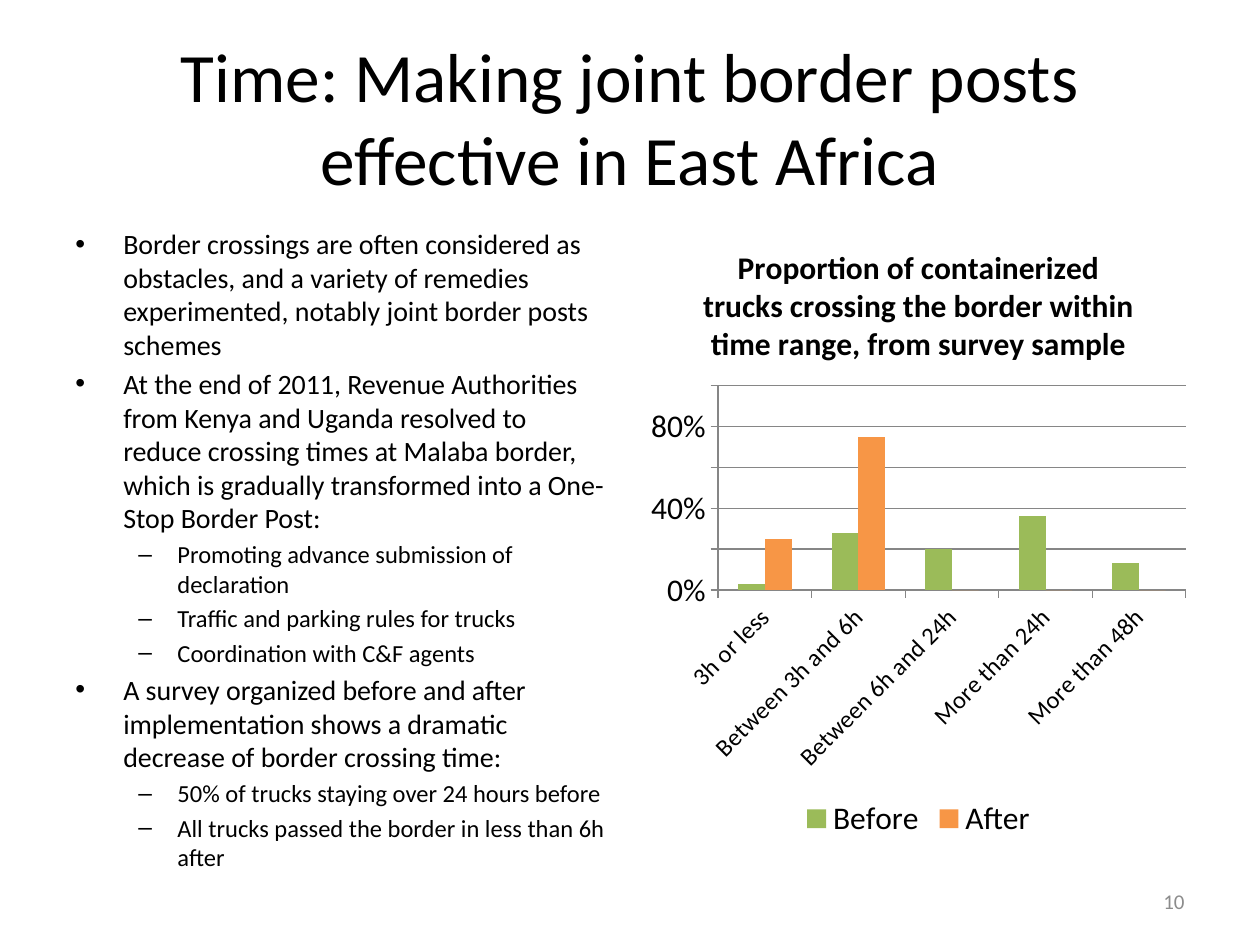
from lxml import etree
from pptx import Presentation
from pptx.chart.data import CategoryChartData
from pptx.dml.color import RGBColor
from pptx.enum.chart import XL_CHART_TYPE, XL_LEGEND_POSITION, XL_TICK_MARK
from pptx.enum.text import MSO_ANCHOR, PP_ALIGN
from pptx.oxml.ns import qn
from pptx.util import Inches, Pt

COLUMN = XL_CHART_TYPE.COLUMN_CLUSTERED
BOTTOM = XL_LEGEND_POSITION.BOTTOM
OUT, NONE = XL_TICK_MARK.OUTSIDE, XL_TICK_MARK.NONE
TOP, MIDDLE = MSO_ANCHOR.TOP, MSO_ANCHOR.MIDDLE
LEFT, CENTER, RIGHT = PP_ALIGN.LEFT, PP_ALIGN.CENTER, PP_ALIGN.RIGHT

WIDE, HIGH = 10, 7.5
# Margins and the two equal content columns
EDGE, GAP = 0.5, 0.16
COL = (WIDE - 2 * EDGE - GAP) / 2
ROW, TALL = 1.75, 4.95

# Level: bullet sign, text size, indent, hanging part
LEVELS = [("•", 16, 0.38, 0.38), ("–", 14, 0.81, 0.31)]

POINTS = [
    (0, "Border crossings are often considered as obstacles, and a variety of "
        "remedies experimented, notably joint border posts schemes"),
    (0, "At the end of 2011, Revenue Authorities from Kenya and Uganda resolved "
        "to reduce crossing times at Malaba border, which is gradually "
        "transformed into a One-Stop Border Post:"),
    (1, "Promoting advance submission of declaration"),
    (1, "Traffic and parking rules for trucks"),
    (1, "Coordination with C&F agents"),
    (0, "A survey organized before and after implementation shows a dramatic "
        "decrease of border crossing time:"),
    (1, "50% of trucks staying over 24 hours before"),
    (1, "All trucks passed the border in less than 6h after"),
]

RANGES = ["3h or less", "Between 3h and 6h", "Between 6h and 24h",
          "More than 24h", "More than 48h"]
SHARES = [("Before", "9BBB59", [0.03, 0.28, 0.2, 0.36, 0.13]),
          ("After", "F79646", [0.25, 0.75, 0, 0, 0])]


def color(code):
    return RGBColor.from_string(code)


class Deck:
    face, ink, gray, rule = "Calibri", "000000", "8C8C8C", "868686"

    def __init__(self):
        self.file = Presentation()
        self.file.slide_width = Inches(WIDE)
        self.file.slide_height = Inches(HIGH)
        self.slide = self.file.slides.add_slide(self.file.slide_layouts[6])

    def style(self, font, size, code=None, bold=False):
        font.name, font.size, font.bold = self.face, Pt(size), bold
        font.color.rgb = color(code or self.ink)

    def box(self, area, anchor):
        frame = self.slide.shapes.add_textbox(*map(Inches, area)).text_frame
        frame.word_wrap = True
        frame.vertical_anchor = anchor
        return frame

    def add_text(self, para, text, size, code=None, align=LEFT):
        para.alignment = align
        run = para.add_run()
        run.text = text
        self.style(run.font, size, code)

    def label(self, area, text, size, align, code=None):
        para = self.box(area, MIDDLE).paragraphs[0]
        self.add_text(para, text, size, code, align)

    def bullets(self, area, items):
        frame = self.box(area, TOP)
        for i, (level, text) in enumerate(items):
            sign, size, left, hang = LEVELS[level]
            para = frame.add_paragraph() if i else frame.paragraphs[0]
            para.level = level
            para.space_before = Pt(0.2 * size if i else 0)
            props = para._p.get_or_add_pPr()
            props.set("marL", str(Inches(left)))
            props.set("indent", str(-Inches(hang)))
            etree.SubElement(props, qn("a:buFont"), typeface="Arial")
            etree.SubElement(props, qn("a:buChar"), char=sign)
            self.add_text(para, text, size)

    def chart(self, area, title, names, rows):
        data = CategoryChartData(number_format="0%")
        data.categories = names
        for name, _, values in rows:
            data.add_series(name, values)
        chart = self.slide.shapes.add_chart(
            COLUMN, *map(Inches, area), data).chart
        self.style(chart.font, 18)

        # Title and legend
        chart.has_title = True
        para = chart.chart_title.text_frame.paragraphs[0]
        run = para.add_run()
        run.text = title
        self.style(run.font, 18, bold=True)
        chart.chart_title.include_in_layout = False
        chart.has_legend = True
        chart.legend.position = BOTTOM
        chart.legend.include_in_layout = False
        self.style(chart.legend.font, 18)

        # Axes
        for axis, size in ((chart.category_axis, 14), (chart.value_axis, 18)):
            axis.major_tick_mark, axis.minor_tick_mark = OUT, NONE
            self.style(axis.tick_labels.font, size)
            axis.format.line.color.rgb = color(self.rule)
        axis = chart.value_axis
        axis.minimum_scale, axis.maximum_scale, axis.major_unit = 0, 1, 0.2
        axis.tick_labels.number_format = "0%"
        axis.tick_labels.number_format_is_linked = False
        axis.major_gridlines.format.line.color.rgb = color(self.rule)

        # Columns
        plot = chart.plots[0]
        plot.gap_width, plot.overlap = 150, 0
        plot.vary_by_categories = False
        for series, (_, code, _) in zip(plot.series, rows):
            series.format.fill.solid()
            series.format.fill.fore_color.rgb = color(code)


def main():
    deck = Deck()
    # Heading
    deck.label((EDGE, 0.3, WIDE - 2 * EDGE, 1.25),
               "Time: Making joint border posts effective in East Africa",
               39.6, CENTER)
    # Left column: findings
    deck.bullets((EDGE, ROW, COL, TALL), POINTS)
    # Right column: survey result
    deck.chart((EDGE + COL + GAP, ROW, COL, TALL),
               "Proportion of containerized trucks crossing the border "
               "within time range, from survey sample", RANGES, SHARES)
    # Page number
    deck.label((WIDE - EDGE - 2.33, 6.95, 2.33, 0.4), "10", 12, RIGHT,
               deck.gray)
    deck.file.save("out.pptx")


if __name__ == "__main__":
    main()
